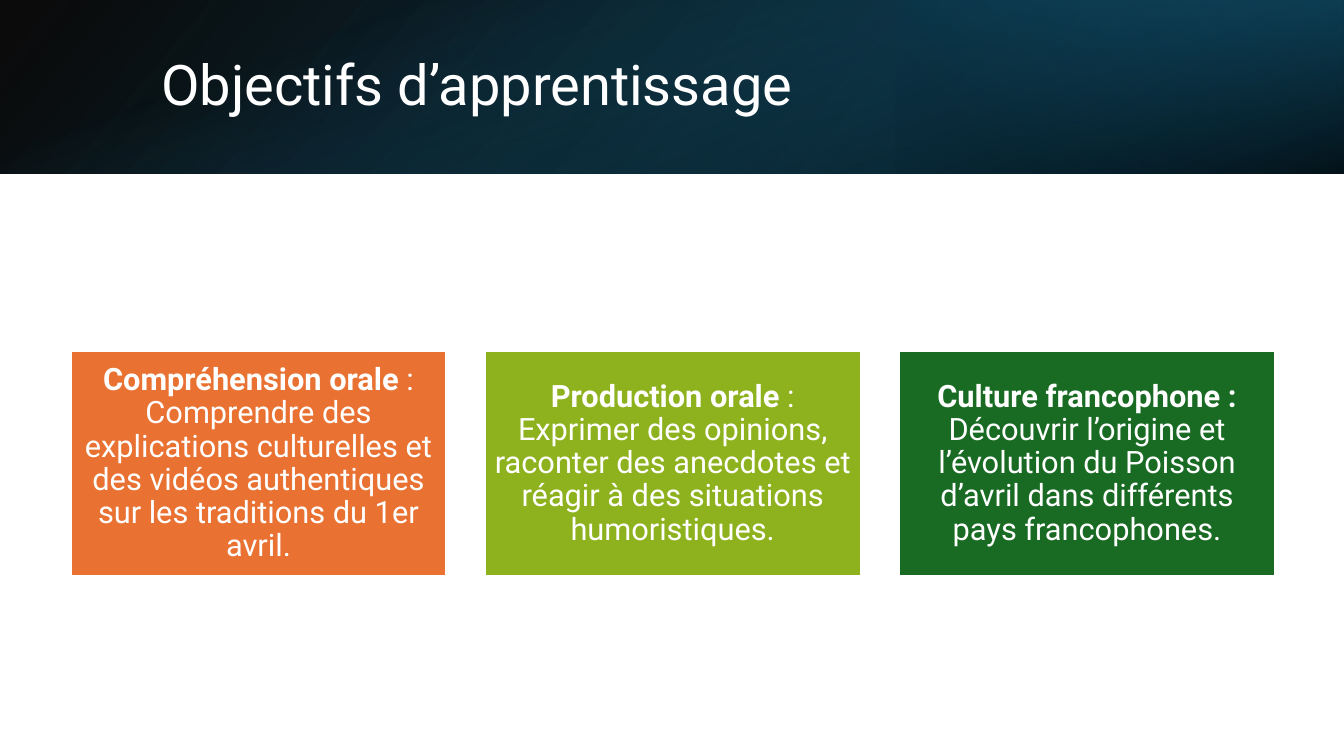
from lxml.etree import SubElement
from pptx import Presentation
from pptx.dml.color import RGBColor
from pptx.enum.shapes import MSO_SHAPE
from pptx.enum.text import MSO_ANCHOR, MSO_AUTO_SIZE, PP_ALIGN
from pptx.oxml.ns import qn
from pptx.util import Cm, Pt

FONT = "Roboto"
COLORS = {
    "white": "FFFFFF",
    "black": "000000",
    "navy": "104862",
    "deep": "0B3041",
    "teal": "156082",
    "orange": "E97132",
    "lime": "8EB21E",
    "green": "196B24",
}
SLIDE_WIDTH, SLIDE_HEIGHT = 33.87, 19.05
BANNER_HEIGHT = 4.38
CARD_LEFT, CARD_TOP, CARD_PITCH = 1.78, 8.84, 10.44
CARD_WIDTH, CARD_HEIGHT = 9.47, 5.69

BANNER_LAYERS = [
    (0, SLIDE_WIDTH, 40, [(0, "black", 96), (100, "navy", 100)]),
    (22.58, 11.29, 320, [(19, "deep", 68), (100, "teal", 79)]),
    (0, SLIDE_WIDTH, 70, [(23, "teal", 0), (99, "black", 74)]),
]
OBJECTIVES = [
    ("orange", "Compréhension orale",
     " : Comprendre des explications culturelles et des vidéos authentiques "
     "sur les traditions du 1er avril."),
    ("lime", "Production orale",
     " : Exprimer des opinions, raconter des anecdotes et réagir à des "
     "situations humoristiques."),
    ("green", "Culture francophone : ",
     "Découvrir l’origine et l’évolution du Poisson d’avril dans différents "
     "pays francophones."),
]


def color(name):
    return RGBColor.from_string(COLORS[name])


def add_rectangle(page, left, top, width, height):
    box = page.shapes.add_shape(
        MSO_SHAPE.RECTANGLE, Cm(left), Cm(top), Cm(width), Cm(height))
    box.shadow.inherit = False
    return box


def add_banner_layer(page, left, width, angle, stops):
    layer = add_rectangle(page, left, 0, width, BANNER_HEIGHT)
    layer.line.fill.background()
    layer.fill.gradient()
    layer.fill.gradient_angle = 360 - angle
    for stop, (position, name, _) in zip(layer.fill.gradient_stops, stops):
        stop.position = position / 100
        stop.color.rgb = color(name)
    tints = layer.element.spPr.iter(qn("a:srgbClr"))
    for tint, (_, _, opacity) in zip(tints, stops):
        SubElement(tint, qn("a:alpha"), val=str(opacity * 1000))


def style_paragraph(para, size, alignment):
    para.alignment = alignment
    para.line_spacing = 0.9
    para.font.name = FONT
    para.font.size = Pt(size)
    para.font.color.rgb = color("white")


def set_title(page, text):
    title = page.shapes.title
    title.left, title.top = Cm(3.81), Cm(0.97)
    title.width, title.height = Cm(27.89), Cm(2.44)
    frame = title.text_frame
    frame.text = text
    frame.auto_size = MSO_AUTO_SIZE.NONE
    frame.vertical_anchor = MSO_ANCHOR.MIDDLE
    style_paragraph(frame.paragraphs[0], 40, PP_ALIGN.LEFT)
    title.element.getparent().append(title.element)


def add_card(page, left, fill, heading, description):
    card = add_rectangle(page, left, CARD_TOP, CARD_WIDTH, CARD_HEIGHT)
    card.fill.solid()
    card.fill.fore_color.rgb = color(fill)
    card.line.color.rgb = color("white")
    card.line.width = Pt(1.5)
    frame = card.text_frame
    frame.word_wrap = True
    frame.vertical_anchor = MSO_ANCHOR.MIDDLE
    frame.margin_left = frame.margin_right = Cm(0.23)
    frame.margin_top = frame.margin_bottom = Cm(0.23)
    para = frame.paragraphs[0]
    style_paragraph(para, 22, PP_ALIGN.CENTER)
    for text, bold in ((heading, True), (description, False)):
        span = para.add_run()
        span.text = text
        span.font.bold = bold


def main():
    deck = Presentation()
    deck.slide_width, deck.slide_height = Cm(SLIDE_WIDTH), Cm(SLIDE_HEIGHT)
    page = deck.slides.add_slide(deck.slide_layouts.get_by_name("Title Only"))
    for layer in BANNER_LAYERS:
        add_banner_layer(page, *layer)
    set_title(page, "Objectifs d’apprentissage")
    for index, objective in enumerate(OBJECTIVES):
        add_card(page, CARD_LEFT + index * CARD_PITCH, *objective)
    deck.save("out.pptx")


if __name__ == "__main__":
    main()
